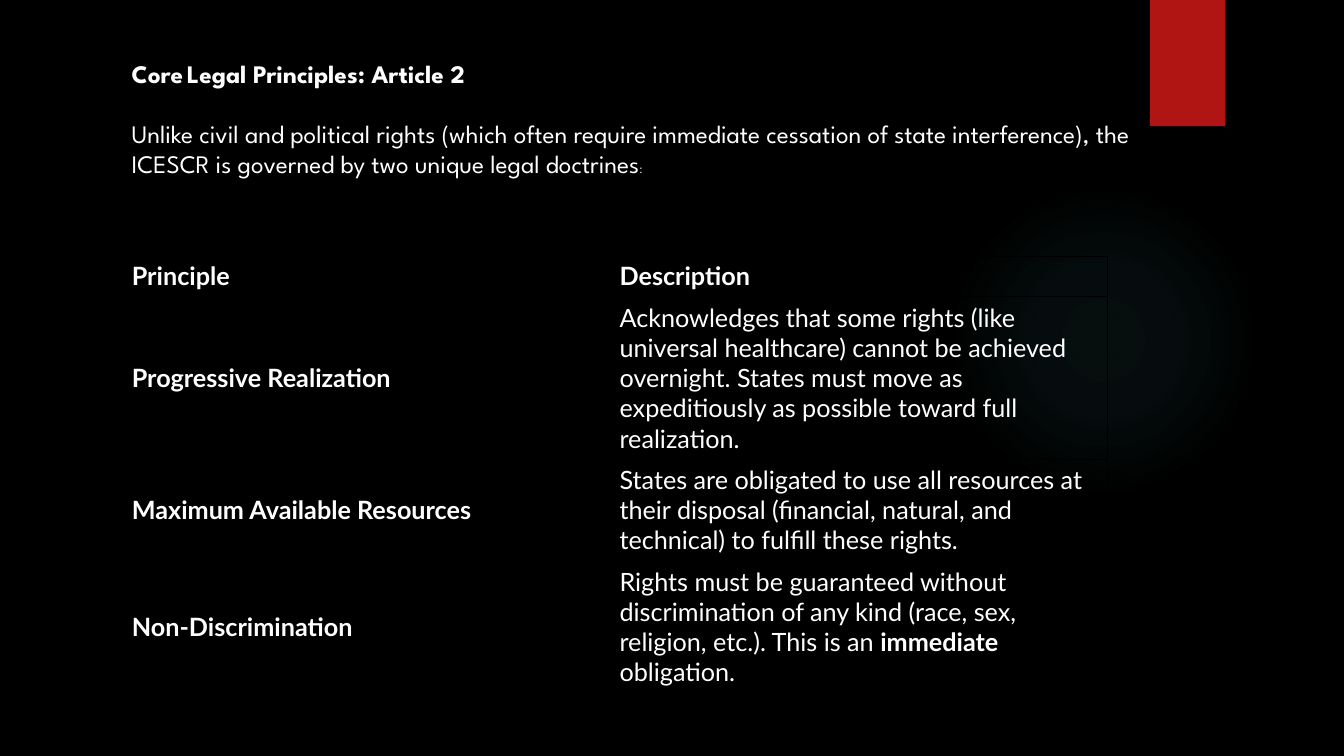
from dataclasses import dataclass

import pptx
import pptx.dml.color
import pptx.enum.shapes
import pptx.enum.text
import pptx.oxml
import pptx.oxml.ns
import pptx.util
from pptx.util import Cm


@dataclass(frozen=True)
class Theme:
    background: str = "000000"
    ink: str = "FFFFFF"
    accent: str = "B01513"
    glow: str = "50B9C1"
    title_font: str = "League Spartan"
    gap_font: str = "Cabin"
    body_font: str = "Lato"
    body_size: int = 18
    gap_size: int = 12
    colon_size: int = 8


theme = Theme()
rgb = pptx.dml.color.RGBColor.from_string
MIDDLE = pptx.enum.text.MSO_ANCHOR.MIDDLE
DRAWING = pptx.oxml.ns.nsdecls("a")


def add_span(para, text, font, size, bold):
    span = para.add_run()
    span.text = text
    values = {"name": font, "size": pptx.util.Pt(size), "bold": bold}
    for name, value in values.items():
        setattr(span.font, name, value)
    span.font.color.rgb = rgb(theme.ink)


deck = pptx.Presentation()
deck.slide_width, deck.slide_height = Cm(33.87), Cm(19.05)
page = deck.slides.add_slide(deck.slide_layouts[5])
page.background.fill.solid()
page.background.fill.fore_color.rgb = rgb(theme.background)

# Soft glow and red tab
glow = page.shapes.add_shape(
    pptx.enum.shapes.MSO_SHAPE.OVAL, Cm(23.9), Cm(4.65), Cm(7.82), Cm(7.82))
tab = page.shapes.add_shape(
    pptx.enum.shapes.MSO_SHAPE.RECTANGLE, Cm(28.98), Cm(0), Cm(1.9), Cm(3.18))
for shape in (glow, tab):
    shape.shadow.inherit = False
    shape.line.fill.background()
tab.fill.solid()
tab.fill.fore_color.rgb = rgb(theme.accent)

stops = "".join(
    f'<a:gs pos="{place * 1000}"><a:srgbClr val="{theme.glow}">'
    f'<a:alpha val="{alpha * 1000}"/></a:srgbClr></a:gs>'
    for place, alpha in ((0, 7), (36, 6), (69, 0), (100, 0)))
gradient = pptx.oxml.parse_xml(
    f'<a:gradFill {DRAWING} rotWithShape="1"><a:gsLst>{stops}</a:gsLst>'
    '<a:path path="circle"><a:fillToRect l="50000" t="50000" r="50000" b="50000"/>'
    '</a:path></a:gradFill>')
glow.element.spPr.find(pptx.oxml.ns.qn("a:prstGeom")).addnext(gradient)

# Principles table
rows = [
    (1.02, "Principle", [("Description", True)]),
    (4.1, "Progressive Realization", [
        ("Acknowledges that some rights (like universal healthcare) cannot be achieved "
         "overnight. States must move as expeditiously as possible toward full "
         "realization.", False)]),
    (2.56, "Maximum Available Resources", [
        ("States are obligated to use all resources at their disposal (financial, "
         "natural, and technical) to fulfill these rights.", False)]),
    (3.33, "Non-Discrimination", [
        ("Rights must be guaranteed without discrimination of any kind (race, sex, "
         "religion, etc.). This is an ", False),
        ("immediate", True),
        (" obligation.", False)]),
]
widths = (12.29, 12.55)
table = page.shapes.add_table(
    len(rows), len(widths), Cm(3.07), Cm(6.45), Cm(sum(widths)),
    Cm(sum(row[0] for row in rows))).table
table.horz_banding = False
for column, width in zip(table.columns, widths):
    column.width = Cm(width)
for row_number, (height, principle, description) in enumerate(rows):
    table.rows[row_number].height = Cm(height)
    for column_number, spans in enumerate(([(principle, True)], description)):
        cell = table.cell(row_number, column_number)
        cell.vertical_anchor = MIDDLE
        for text, bold in spans:
            add_span(cell.text_frame.paragraphs[0], text, theme.body_font,
                     theme.body_size, bold)
        properties = cell._tc.get_or_add_tcPr()
        for side in ("lnL", "lnR", "lnT", "lnB"):
            properties.append(pptx.oxml.parse_xml(
                f'<a:{side} {DRAWING} w="{pptx.util.Pt(0.75)}"><a:solidFill>'
                f'<a:srgbClr val="{theme.background}"/></a:solidFill></a:{side}>'))
        cell.fill.background()

# Title and introduction
title = page.shapes.title
title.left, title.top, title.width, title.height = Cm(3.07), Cm(1.45), Cm(25.81), Cm(3.07)
frame = title.text_frame
frame_format = {
    "word_wrap": True, "auto_size": pptx.enum.text.MSO_AUTO_SIZE.NONE,
    "vertical_anchor": MIDDLE, "margin_left": Cm(0.25), "margin_right": Cm(0.25),
    "margin_top": 0, "margin_bottom": 0,
}
for name, value in frame_format.items():
    setattr(frame, name, value)
title_paras = [
    [("Core", theme.title_font, theme.body_size, True),
     (" ", theme.gap_font, theme.gap_size, True),
     ("Legal Principles: Article 2", theme.title_font, theme.body_size, True)],
    [("Unlike civil and political rights (which often require immediate cessation of "
      "state interference), the ICESCR is governed by two unique legal doctrines",
      theme.title_font, theme.body_size, False),
     (":", theme.body_font, theme.colon_size, False)],
]
for number, spans in enumerate(title_paras):
    para = frame.add_paragraph() if number else frame.paragraphs[0]
    para.alignment = pptx.enum.text.PP_ALIGN.LEFT
    para.line_spacing = pptx.util.Pt(21.5)
    para.space_before = pptx.util.Pt(21.5 * number)
    for span in spans:
        add_span(para, *span)

deck.save("out.pptx")
